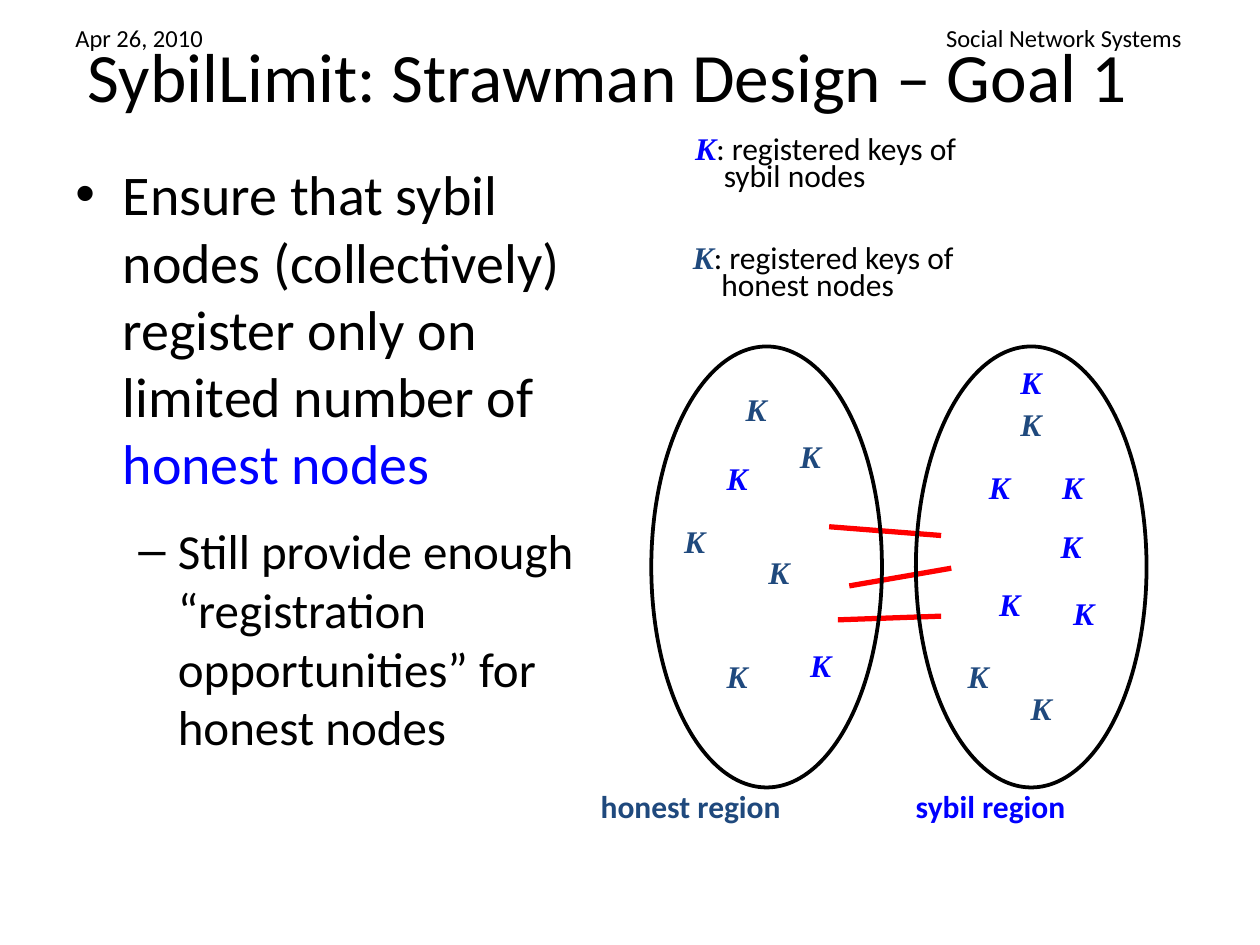
from lxml import etree
from pptx import Presentation
from pptx.dml.color import RGBColor
from pptx.enum.shapes import MSO_CONNECTOR, MSO_SHAPE
from pptx.enum.text import MSO_ANCHOR, MSO_AUTO_SIZE, PP_ALIGN
from pptx.oxml.ns import qn
from pptx.util import Pt

STRAIGHT = MSO_CONNECTOR.STRAIGHT
OVAL = MSO_SHAPE.OVAL
MIDDLE = MSO_ANCHOR.MIDDLE
CENTER = PP_ALIGN.CENTER
GROW = MSO_AUTO_SIZE.SHAPE_TO_FIT_TEXT

BLACK, RED, SYBIL, HONEST = "000000", "FF0000", "0000FF", "1F497D"
KEY = {"name": "Times New Roman", "bold": True, "italic": True}
REGION_TOP, REGION_WIDTH, REGION_HEIGHT = 198, 131.8, 252
LABEL_TOP = 451.4

HONEST_KEYS = [(419, 219.6), (576, 228.2), (432, 312.5), (450, 246.2),
               (383.8, 294.5), (581.8, 390.2), (408.2, 372.2), (545.8, 372.2)]
SYBIL_KEYS = [(558, 264.2), (599, 297.4), (563.8, 330.5), (408.2, 258.5),
              (599.8, 264.2), (606.2, 336.2), (576, 203.8), (455.8, 365.8)]
ATTACK_EDGES = [(485.3, 334.8, 543.6, 324.7), (478.8, 354.2, 537.8, 352.1),
                (473.8, 301, 537.8, 306)]


def color(value):
    return RGBColor.from_string(value)


def apply(target, formats):
    for name, value in formats.items():
        setattr(target, name, value)


def add_box(page, left, top, width, height, **formats):
    box = page.shapes.add_textbox(Pt(left), Pt(top), Pt(width), Pt(height))
    apply(box.text_frame, {"word_wrap": True, **formats})
    return box.text_frame


def add_span(para, text, size, fill=BLACK, **formats):
    span = para.add_run()
    span.text = text
    apply(span.font, {"name": "Calibri", "size": Pt(size), **formats})
    span.font.color.rgb = color(fill)


def indent(para, margin, first=0):
    properties = para._p.get_or_add_pPr()
    properties.set("marL", str(Pt(margin)))
    properties.set("indent", str(Pt(first)))
    return properties


def add_bullet(para, mark, margin, hang):
    properties = indent(para, margin, -hang)
    before = etree.SubElement(properties, qn("a:spcBef"))
    etree.SubElement(before, qn("a:spcPct"), val="50000")
    etree.SubElement(properties, qn("a:buFont"), typeface="Arial")
    etree.SubElement(properties, qn("a:buChar"), char=mark)


def add_running_head(page, left, width, text):
    frame = add_box(page, left, 9.4, width, 24.5, word_wrap=False, auto_size=GROW)
    add_span(frame.paragraphs[0], text, 14)


def add_title(page, text):
    frame = add_box(page, 15.1, 9.4, 664.6, 66.2, vertical_anchor=MIDDLE)
    para = frame.paragraphs[0]
    para.alignment = CENTER
    add_span(para, text, 39.6)


def add_goals(page):
    frame = add_box(page, 36, 87.8, 318.2, 367.9)
    goal = frame.paragraphs[0]
    add_bullet(goal, "•", 27, 27)
    add_span(goal, "Ensure that sybil nodes (collectively) register only on "
                   "limited number of ", 32)
    add_span(goal, "honest nodes", 32, SYBIL)
    detail = frame.add_paragraph()
    detail.level = 1
    add_bullet(detail, "–", 58.5, 22.5)
    add_span(detail, "Still provide enough “registration opportunities” for "
                     "honest nodes", 28)


def add_edge(page, x1, y1, x2, y2):
    edge = page.shapes.add_connector(STRAIGHT, Pt(x1), Pt(y1), Pt(x2), Pt(y2))
    edge.line.color.rgb = color(RED)
    edge.line.width = Pt(3)
    etree.SubElement(edge._element.spPr, qn("a:effectLst"))


def add_region(page, left):
    region = page.shapes.add_shape(OVAL, Pt(left), Pt(REGION_TOP),
                                   Pt(REGION_WIDTH), Pt(REGION_HEIGHT))
    region.shadow.inherit = False
    region.fill.background()
    region.line.color.rgb = color(BLACK)
    region.line.width = Pt(2.15)


def add_region_label(page, left, width, text, fill):
    frame = add_box(page, left, LABEL_TOP, width, 28.8, auto_size=GROW)
    para = frame.paragraphs[0]
    para.line_spacing = 0.75
    add_span(para, text, 18, fill, bold=True)


def add_key(page, left, top, fill):
    frame = add_box(page, left, top, 30.2, 36, word_wrap=False, auto_size=GROW)
    add_span(frame.paragraphs[0], "K", 18, fill, **KEY)


def add_legend(page, left, top, height, owner, fill, first_spacing):
    frame = add_box(page, left, top, 246.2, height, auto_size=GROW)
    first, second = frame.paragraphs[0], frame.add_paragraph()
    first.line_spacing, second.line_spacing = first_spacing, 0.7
    add_span(first, "K", 18, fill, **KEY)
    add_span(first, ": registered keys of", 18)
    indent(second, 16.3)
    add_span(second, owner, 18)


def main():
    deck = Presentation()
    deck.slide_width, deck.slide_height = Pt(720), Pt(540)
    page = deck.slides.add_slide(deck.slide_layouts[6])

    add_running_head(page, 533.5, 150.5, "Social Network Systems")
    add_running_head(page, 36, 88.6, "Apr 26, 2010")
    add_title(page, "SybilLimit: Strawman Design – Goal 1")
    add_goals(page)

    for edge in ATTACK_EDGES:
        add_edge(page, *edge)
    for left in (372.2, 523.4):
        add_region(page, left)
    add_region_label(page, 516.2, 149.8, "sybil region", SYBIL)
    add_region_label(page, 336.2, 180, "honest region", HONEST)

    add_legend(page, 390.2, 76.3, 56.2, "sybil nodes", SYBIL, 0.7)
    for fill, places in ((HONEST, HONEST_KEYS), (SYBIL, SYBIL_KEYS)):
        for left, top in places:
            add_key(page, left, top, fill)
    add_legend(page, 388.8, 132.5, 64.8, "honest nodes", HONEST, 1.0)

    deck.save("out.pptx")


if __name__ == "__main__":
    main()
